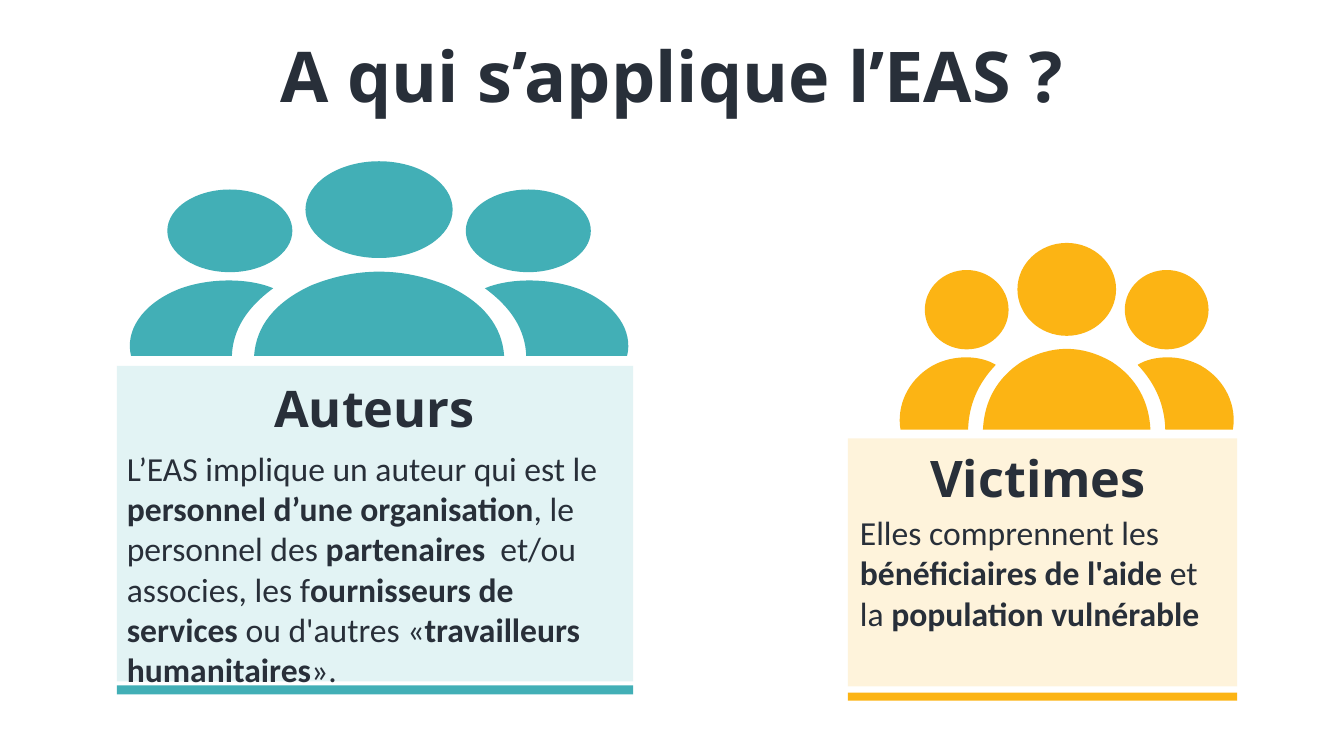
from pptx import Presentation
from pptx.dml.color import RGBColor
from pptx.enum.shapes import MSO_SHAPE as SHAPE
from pptx.enum.text import MSO_ANCHOR as ANCHOR, MSO_AUTO_SIZE as AUTO, PP_ALIGN as ALIGN
from pptx.oxml.ns import qn
from pptx.util import Pt
from lxml.etree import SubElement

PX = 9144  # EMU per px, 100 px to the inch
COLORS = {"ink": "282F39", "teal": "42AFB6", "amber": "FCB414"}

# Content: runs are (text, bold); boxes are left, top, width, height in px
TITLE = "A qui s’applique l’EAS ?"
GROUPS = [
    {
        "color": "amber", "heading": "Victimes ",
        "panel": (841, 435, 386, 246), "bar": (841, 687, 386, 8),
        "heading_box": (895, 439, 282, 71), "text_box": (843, 503, 379, 131),
        "people": (1058, 241, 0.67, 0.96),  # centre x, top, x scale, y scale
        "runs": [("Elles comprennent les ", False),
                 ("bénéficiaires de l'aide ", True),
                 ("et la ", False),
                 ("population vulnérable", True)],
    },
    {
        "color": "teal", "heading": "Auteurs ",
        "panel": (116, 363, 512, 313), "bar": (116, 680, 512, 9),
        "heading_box": (148, 369, 460, 71), "text_box": (116, 439, 512, 252),
        "people": (376, 160, 1, 1),
        "runs": [("L’EAS implique un auteur qui est le ", False),
                 ("personnel d’une organisation", True),
                 (", le personnel des ", False),
                 ("partenaires", True),
                 ("  et/ou associes, les f", False),
                 ("ournisseurs de services", True),
                 (" ou d'autres «", False),
                 ("travailleurs humanitaires", True),
                 ("».", False)],
    },
]

# People icon, measured from its centre line and top.
# An outline is a start point, then two control points and an end per curve.
FRONT_BODY = [(-124, 193),
              (-122, 164), (-104, 140), (-67, 123),
              (-22, 105), (22, 105), (67, 123),
              (104, 140), (122, 164), (124, 193)]
SIDE_BODY = [(146, 193),
             (145, 167), (131, 145), (105, 126),
             (128, 116), (168, 115), (199, 127),
             (236, 142), (252, 169), (246, 193)]
ROUND = 0.55  # control point distance for a quarter of a circle

prs = Presentation()
prs.slide_width, prs.slide_height = 1333 * PX, 750 * PX
slide = prs.slides.add_slide(prs.slide_layouts[5])
shapes = slide.shapes


def emu(*lengths):
    return [round(v * PX) for v in lengths]


def paint(sp, color, alpha=None):
    sp.fill.solid()
    sp.fill.fore_color.rgb = RGBColor.from_string(COLORS[color])
    sp.line.fill.background()
    sp.shadow.inherit = False
    if alpha:
        rgb = sp.fill._xPr.find(".//" + qn("a:srgbClr"))
        SubElement(rgb, qn("a:alpha")).set("val", str(alpha * 1000))


def write(sp, runs, font="Calibri", size=24, align=ALIGN.LEFT):
    tf = sp.text_frame
    tf.word_wrap = True
    tf.auto_size = AUTO.SHAPE_TO_FIT_TEXT
    tf.vertical_anchor = ANCHOR.TOP
    p = tf.paragraphs[0]
    p.alignment = align
    for text, bold in runs:
        r = p.add_run()
        r.text = text
        r.font.name, r.font.size, r.font.bold = font, Pt(size), bold
        r.font.color.rgb = RGBColor.from_string(COLORS["ink"])


def head(cx, cy, rx, ry):
    k = ROUND
    unit = [(0, 1), (-k, 1), (-1, k), (-1, 0), (-1, -k), (-k, -1), (0, -1),
            (k, -1), (1, -k), (1, 0), (1, k), (k, 1), (0, 1)]
    return [(cx + x * rx, cy + y * ry) for x, y in unit]


def mirror(outline):
    return [(-x, y) for x, y in outline]


def add_curved(parent, points):
    builder = parent.build_freeform(*points[0])
    builder.add_line_segments(points[1:], close=True)
    sp = builder.convert_to_shape()
    # Turn every three line segments into one Bezier curve
    lines = list(sp._element.iter(qn("a:lnTo")))[:len(points) - 1]
    for i in range(0, len(lines), 3):
        curve = SubElement(lines[i].getparent(), qn("a:cubicBezTo"))
        lines[i].addprevious(curve)
        for line in lines[i:i + 3]:
            curve.append(line[0])
            line.getparent().remove(line)
    return sp


def draw_people(cx, top, sx, sy, color):
    side_head = head(148, 69, 62, 41)
    people = shapes.add_group_shape()
    for outline in (FRONT_BODY, head(0, 48, 73, 48), mirror(side_head),
                    side_head, SIDE_BODY, mirror(SIDE_BODY)):
        points = [emu(cx + x * sx, top + y * sy) for x, y in outline]
        paint(add_curved(people.shapes, points), color)


# Title
title = shapes.title
title.left, title.top, title.width, title.height = emu(83, 27, 1167, 94)
write(title, [(TITLE, True)], font="Noto Sans", size=50, align=ALIGN.CENTER)

# One panel with its people icon, heading, text and bar per group
for g in GROUPS:
    paint(shapes.add_shape(SHAPE.RECTANGLE, *emu(*g["panel"])), g["color"], alpha=15)
    paint(shapes.add_shape(SHAPE.RECTANGLE, *emu(*g["bar"])), g["color"])
    draw_people(*g["people"], g["color"])
    write(shapes.add_textbox(*emu(*g["heading_box"])), [(g["heading"], True)],
          font="Noto Sans", size=36, align=ALIGN.CENTER)
    write(shapes.add_textbox(*emu(*g["text_box"])), g["runs"])

prs.save("out.pptx")
